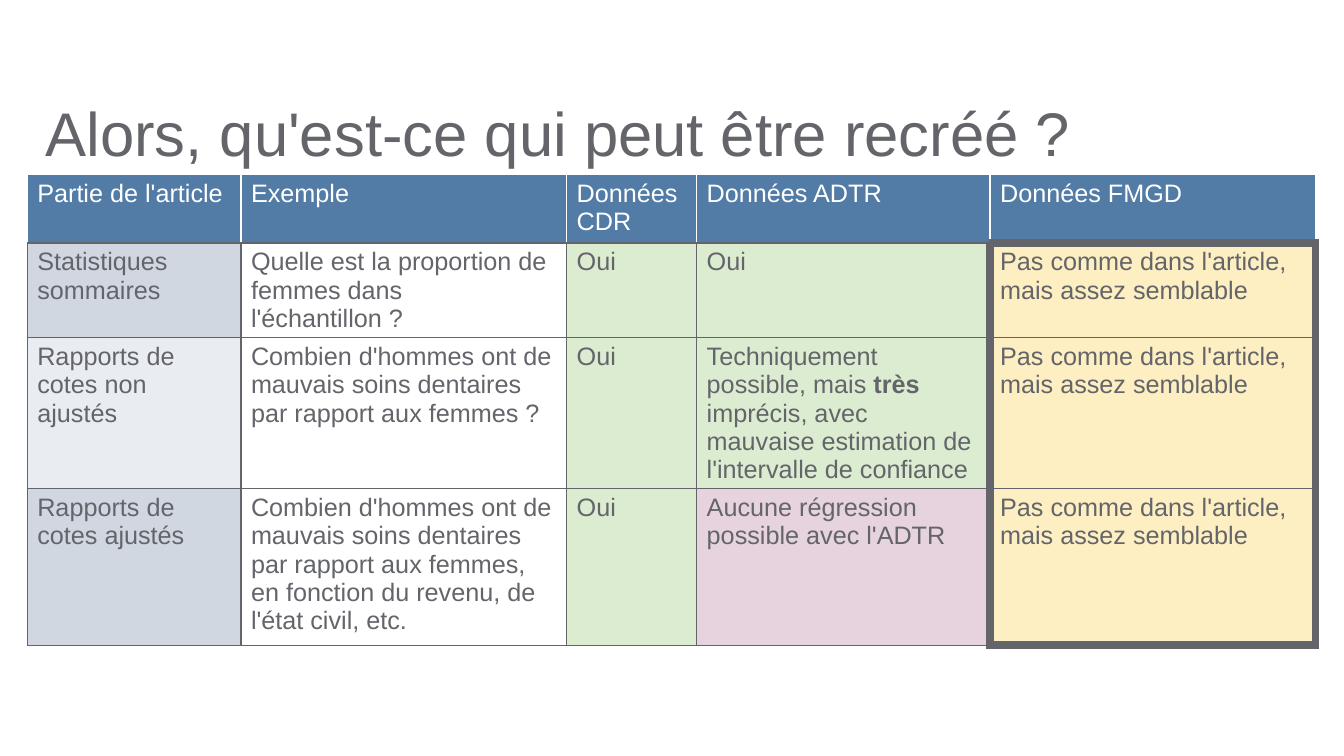
from lxml.etree import SubElement
from pptx import Presentation
from pptx.dml.color import RGBColor
from pptx.enum.text import MSO_ANCHOR, MSO_AUTO_SIZE, PP_ALIGN
from pptx.oxml.ns import qn
from pptx.util import Inches, Pt

COLORS = {
    "white": "FFFFFF", "gray": "63656A", "blue": "527CA6", "dusk": "D1D7E1",
    "mist": "E9ECF1", "green": "DCECD1", "pink": "E7D3DD", "gold": "FEEFC2",
}
WIDTHS = [2.12, 3.23, 1.29, 2.91, 3.23]
HEIGHTS = [0.68, 0.68, 1.26, 1.55]
SIMILAR = "Pas comme dans l'article, mais assez semblable"

# Each cell is a text, or a list of (text, bold) runs
ROWS = [
    ["Partie de l'article", "Exemple", "Données CDR", "Données ADTR", "Données FMGD"],
    ["Statistiques sommaires",
     "Quelle est la proportion de femmes dans l'échantillon ?",
     "Oui", "Oui", SIMILAR],
    ["Rapports de cotes non ajustés",
     "Combien d'hommes ont de mauvais soins dentaires par rapport aux femmes ?",
     "Oui",
     [("Techniquement possible, mais ", False), ("très", True),
      (" imprécis, avec mauvaise estimation de l'intervalle de confiance", False)],
     SIMILAR],
    ["Rapports de cotes ajustés",
     "Combien d'hommes ont de mauvais soins dentaires par rapport aux femmes, "
     "en fonction du revenu, de l'état civil, etc.",
     "Oui", "Aucune régression possible avec l'ADTR", SIMILAR],
]
FILLS = [
    ["blue"] * 5,
    ["dusk", "white", "green", "green", "gold"],
    ["mist", "white", "green", "green", "gold"],
    ["dusk", "white", "green", "pink", "gold"],
]


def edges(row, col):
    """Colour and width of each side: white header lines, heavy box on the last column."""
    last, end = len(WIDTHS) - 1, len(HEIGHTS) - 1
    head = "white" if row == 0 else "gray"
    boxed = row > 0 and col == last
    return {
        "L": (head, 6 if boxed else 1),
        "R": (head, 6 if row > 0 and col >= last - 1 else 1),
        "T": (head, 6 if boxed and row == 1 else 1),
        "B": ("gray", 6 if col == last and row in (0, end) else 1),
    }


class Deck:
    font = "Arial"

    def __init__(self):
        self.prs = Presentation()
        self.prs.slide_width = Inches(13.33)
        self.prs.slide_height = Inches(7.5)
        self.slide = self.prs.slides.add_slide(self.prs.slide_layouts[5])

    def color(self, name):
        return RGBColor.from_string(COLORS[name])

    def run(self, para, text, size, color, bold=False):
        run = para.add_run()
        run.text = text
        run.font.name = self.font
        run.font.size = Pt(size)
        run.font.bold = bold
        run.font.color.rgb = self.color(color)

    def title(self, text, box):
        shape = self.slide.shapes.title
        shape.left, shape.top, shape.width, shape.height = map(Inches, box)
        frame = shape.text_frame
        frame.word_wrap = True
        frame.auto_size = MSO_AUTO_SIZE.NONE
        frame.vertical_anchor = MSO_ANCHOR.MIDDLE
        para = frame.paragraphs[0]
        para.alignment = PP_ALIGN.LEFT
        para.line_spacing = 0.9
        self.run(para, text, 44, "gray")

    def border(self, cell, side, color, width):
        props = cell._tc.get_or_add_tcPr()
        line = SubElement(props, qn(f"a:ln{side}"), w=str(Pt(width)))
        fill = SubElement(line, qn("a:solidFill"))
        SubElement(fill, qn("a:srgbClr"), val=COLORS[color])

    def cell(self, cell, text, fill, ink, sides):
        runs = [(text, False)] if isinstance(text, str) else text
        for part, bold in runs:
            self.run(cell.text_frame.paragraphs[0], part, 18, ink, bold)
        for side, (color, width) in sides.items():
            self.border(cell, side, color, width)
        cell.fill.solid()
        cell.fill.fore_color.rgb = self.color(fill)

    def table(self, left, top):
        size = map(Inches, (left, top, sum(WIDTHS), sum(HEIGHTS)))
        table = self.slide.shapes.add_table(len(HEIGHTS), len(WIDTHS), *size).table
        table.horz_banding = False
        for col, width in zip(table.columns, WIDTHS):
            col.width = Inches(width)
        for row, height in zip(table.rows, HEIGHTS):
            row.height = Inches(height)
        for r, texts in enumerate(ROWS):
            ink = "gray" if r else "white"
            for c, text in enumerate(texts):
                self.cell(table.cell(r, c), text, FILLS[r][c], ink, edges(r, c))


def main():
    deck = Deck()
    # Title
    deck.title("Alors, qu'est-ce qui peut être recréé ?", (0.35, 0.97, 12.8, 0.76))
    # Comparison table
    deck.table(0.27, 1.73)
    deck.prs.save("out.pptx")


if __name__ == "__main__":
    main()
